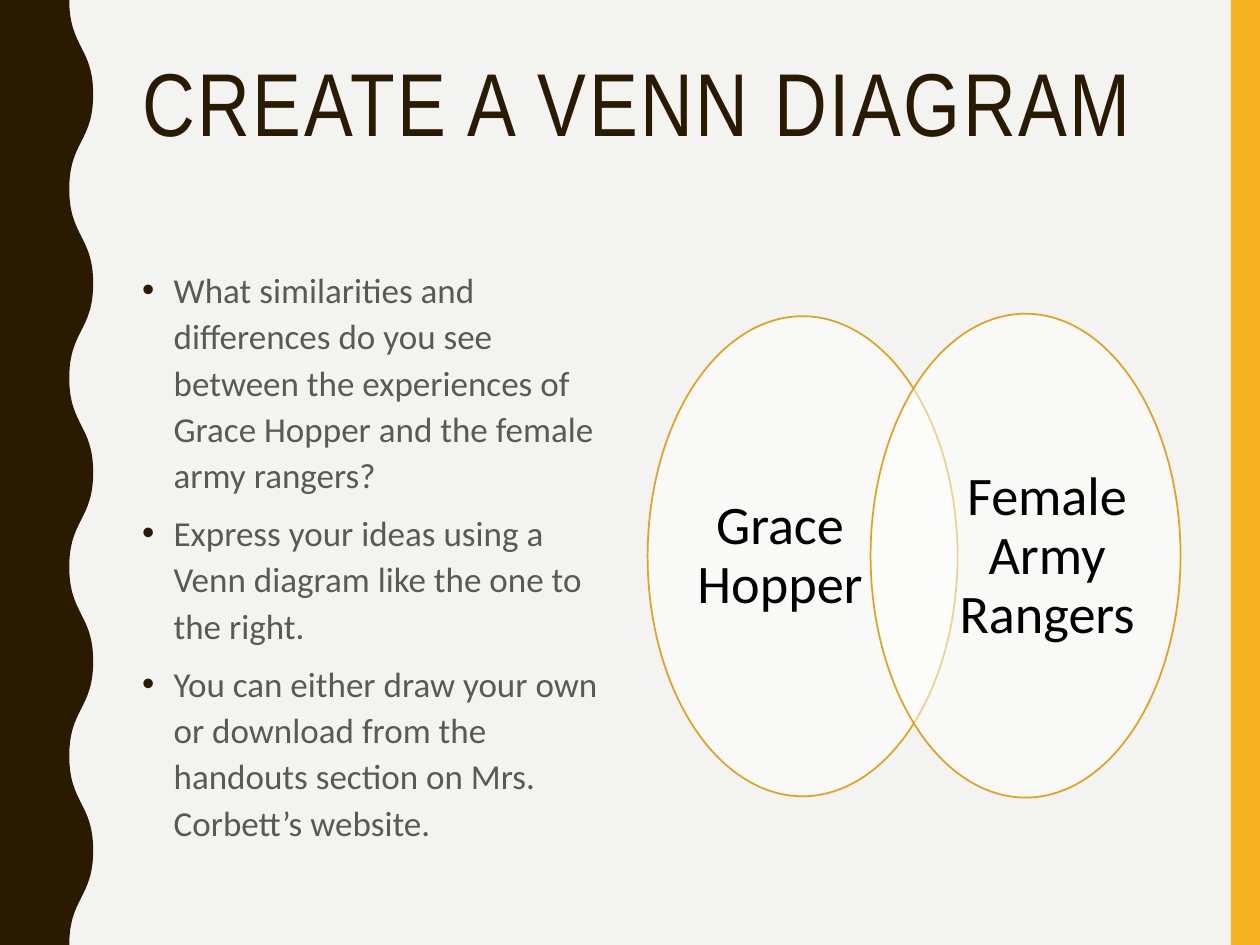
from dataclasses import dataclass

from lxml import etree
from pptx import Presentation
from pptx.dml.color import RGBColor
from pptx.enum import shapes, text
from pptx.oxml import ns
from pptx.util import Inches, Pt


@dataclass(frozen=True)
class Theme:
    paper: str = "F3F3F2"
    dark: str = "2A1A00"
    gold: str = "F8B323"
    edge: str = "E1A220"
    oval: str = "FFFFFF"
    body: str = "595959"
    label: str = "000000"
    head_font: str = "Arial Narrow"
    body_font: str = "Calibri"
    head_size: int = 51
    body_size: int = 20
    label_size: int = 31


T = Theme()


def paint(shape, color):
    """Give a shape a flat fill, no line and no shadow."""
    shape.shadow.inherit = False
    shape.fill.solid()
    shape.fill.fore_color.rgb = RGBColor.from_string(color)
    shape.line.fill.background()


def write(para, words, font, size, color, space):
    """Add one run to a paragraph and set its line spacing."""
    para.line_spacing = space
    run = para.add_run()
    run.text = words
    run.font.name = font
    run.font.size = Pt(size)
    run.font.color.rgb = RGBColor.from_string(color)
    return run


prs = Presentation()
prs.slide_width, prs.slide_height = Inches(10), Inches(7.5)
slide = prs.slides.add_slide(prs.slide_layouts[6])
slide.background.fill.solid()
slide.background.fill.fore_color.rgb = RGBColor.from_string(T.paper)

# Gold bar on the right
bar = slide.shapes.add_shape(
    shapes.MSO_SHAPE.RECTANGLE, Inches(9.77), 0, Inches(0.23), Inches(7.5))
paint(bar, T.gold)

# Wavy band on the left: ten half waves between two depths
low, high, half = 0.55, 0.74, 0.75
knots = [(high if i % 2 else low, i * half) for i in range(11)]
pen = slide.shapes.build_freeform(0, 0)
pen.add_line_segments(
    [(Inches(x), Inches(y)) for x, y in knots] + [(0, Inches(7.5))], close=True)
band = pen.convert_to_shape()
paint(band, T.dark)

# Bend each half wave into one S curve
sides = list(band._element.iter(ns.qn("a:lnTo")))
for side, (x0, y0), (x1, y1) in zip(sides[1:], knots, knots[1:]):
    curve = etree.Element(ns.qn("a:cubicBezTo"))
    turn = (y0 + y1) / 2
    for x, y in [(x0, turn), (x1, turn), (x1, y1)]:
        etree.SubElement(curve, ns.qn("a:pt"),
                         x=str(Inches(x)), y=str(Inches(y)))
    side.getparent().replace(side, curve)

# Title
title = slide.shapes.add_textbox(
    Inches(1.03), Inches(0.42), Inches(8.35), Inches(1.63)).text_frame
title.word_wrap = True
run = write(title.paragraphs[0], "CREATE A VENN DIAGRAM",
            T.head_font, T.head_size, T.dark, 0.9)
run._r.get_or_add_rPr().set("spc", "150")

# Bulleted tasks
tasks = [
    "What similarities and differences do you see between the experiences "
    "of Grace Hopper and the female army rangers?",
    "Express your ideas using a Venn diagram like the one to the right.",
    "You can either draw your own or download from the handouts section "
    "on Mrs. Corbett’s website.",
]
body = slide.shapes.add_textbox(
    Inches(1.03), Inches(2.05), Inches(3.93), Inches(5.03)).text_frame
body.word_wrap = True
for i, task in enumerate(tasks):
    para = body.add_paragraph() if i else body.paragraphs[0]
    write(para, task, T.body_font, T.body_size, T.body, 1.1)
    para.space_before = Pt(7)
    props = para._p.get_or_add_pPr()
    props.set("marL", str(Inches(0.25)))
    props.set("indent", str(-Inches(0.25)))
    tint = etree.SubElement(props, ns.qn("a:buClr"))
    etree.SubElement(tint, ns.qn("a:srgbClr"), val=T.dark)
    etree.SubElement(props, ns.qn("a:buFont"), typeface="Arial")
    etree.SubElement(props, ns.qn("a:buChar"), char="•")

# Venn diagram: name, then left, top, width and height of oval and label
sets = [
    ("Grace Hopper", (5.14, 2.51, 2.46, 3.81), (5.48, 2.96, 1.42, 2.91)),
    ("Female Army Rangers", (6.91, 2.49, 2.46, 3.84), (7.6, 2.95, 1.42, 2.94)),
]
venn = slide.shapes.add_group_shape()
for name, ring, area in sets:
    oval = venn.shapes.add_shape(shapes.MSO_SHAPE.OVAL, *map(Inches, ring))
    paint(oval, T.oval)
    oval.line.color.rgb = RGBColor.from_string(T.edge)
    oval.line.width = Pt(1)
    tint = oval._element.spPr.find(ns.qn("a:solidFill"))[0]
    etree.SubElement(tint, ns.qn("a:alpha"), val="50000")

    frame = venn.shapes.add_textbox(*map(Inches, area)).text_frame
    frame.word_wrap = True
    frame.vertical_anchor = text.MSO_ANCHOR.MIDDLE
    frame.margin_left = frame.margin_right = 0
    frame.margin_top = frame.margin_bottom = 0
    para = frame.paragraphs[0]
    para.alignment = text.PP_ALIGN.CENTER
    write(para, name, T.body_font, T.label_size, T.label, 0.9)

prs.save("out.pptx")
